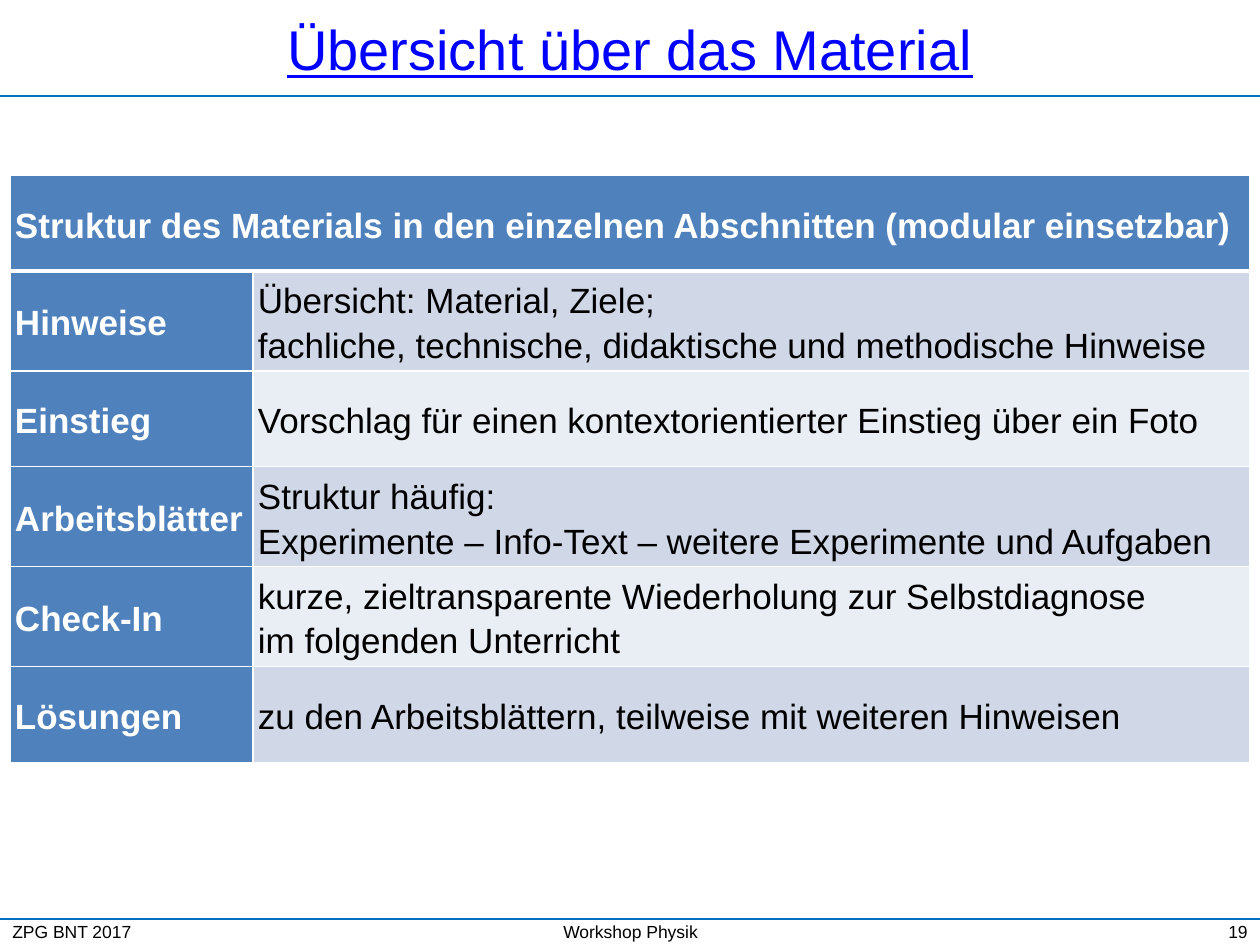
import pptx
import pptx.dml.color
import pptx.enum.shapes
import pptx.enum.text
import pptx.oxml.ns
import pptx.util
from lxml import etree

RGBColor = pptx.dml.color.RGBColor
PP_ALIGN = pptx.enum.text.PP_ALIGN
MIDDLE = pptx.enum.text.MSO_ANCHOR.MIDDLE

RULE_BLUE = RGBColor(0x00, 0x70, 0xC0)
TITLE_BLUE = RGBColor(0x00, 0x00, 0xFF)
HEADER_BLUE = RGBColor(0x4F, 0x81, 0xBD)
BAND_DARK = RGBColor(0xD0, 0xD8, 0xE8)
BAND_LIGHT = RGBColor(0xE9, 0xED, 0xF4)
WHITE = RGBColor(0xFF, 0xFF, 0xFF)
BLACK = RGBColor(0x00, 0x00, 0x00)

PX_PER_INCH = 126
SLIDE_WIDTH, SLIDE_HEIGHT = 1260, 945
CELL_INSET = 5

TITLE_FONT = {"name": "Arial", "size": pptx.util.Pt(32), "underline": True}
LABEL_FONT = {"name": "Arial", "size": pptx.util.Pt(20), "bold": True}
DETAIL_FONT = {"name": "Arial", "size": pptx.util.Pt(20), "bold": False}
FOOTER_FONT = {"name": "Arial", "size": pptx.util.Pt(10)}

HEADING = "Struktur des Materials in den einzelnen Abschnitten (modular einsetzbar)"
SECTIONS = [
    ("Hinweise", "Übersicht: Material, Ziele; \vfachliche, technische, didaktische und methodische Hinweise"),
    ("Einstieg", "Vorschlag für einen kontextorientierter Einstieg über ein Foto"),
    ("Arbeitsblätter", "Struktur häufig: \vExperimente – Info-Text – weitere Experimente und Aufgaben"),
    ("Check-In", "kurze, zieltransparente Wiederholung zur Selbstdiagnose \vim folgenden Unterricht"),
    ("Lösungen", "zu den Arbeitsblättern, teilweise mit weiteren Hinweisen"),
]


def px(length):
    return pptx.util.Emu(round(length * 914400 / PX_PER_INCH))


def set_attributes(target, values):
    for name, value in values.items():
        setattr(target, name, value)


def write_text(frame, wording, font, color, paragraph_format):
    paragraph = frame.paragraphs[0]
    paragraph.text = wording
    set_attributes(paragraph, paragraph_format)
    for run in paragraph.runs:
        set_attributes(run.font, font)
        run.font.color.rgb = color


def add_rule(slide, left, top, width):
    rule = slide.shapes.add_connector(
        pptx.enum.shapes.MSO_CONNECTOR.STRAIGHT, px(left), px(top), px(left + width), px(top))
    rule.line.color.rgb = RULE_BLUE
    rule.line.width = pptx.util.Pt(1.5)
    etree.SubElement(rule._element.spPr, pptx.oxml.ns.qn("a:effectLst"))


def add_title(slide, left, top, width, height):
    title = slide.shapes.title
    set_attributes(title, {"left": px(left), "top": px(top), "width": px(width), "height": px(height)})
    set_attributes(title.text_frame, {"vertical_anchor": MIDDLE, "word_wrap": True,
                                      "auto_size": pptx.enum.text.MSO_AUTO_SIZE.NONE})
    write_text(title.text_frame, "Übersicht über das Material", TITLE_FONT, TITLE_BLUE,
               {"alignment": PP_ALIGN.CENTER})
    add_rule(slide, left, top + height, width)


def add_borders(cell, widths):
    properties = cell._tc.get_or_add_tcPr()
    for position, (side, points) in enumerate(widths.items()):
        border = etree.Element(pptx.oxml.ns.qn(f"a:ln{side}"), w=str(pptx.util.Pt(points)))
        fill = etree.SubElement(border, pptx.oxml.ns.qn("a:solidFill"))
        etree.SubElement(fill, pptx.oxml.ns.qn("a:srgbClr"), val=str(WHITE))
        properties.insert(position, border)


def format_cell(cell, wording, fill, font, color, top=1, bottom=1):
    margins = {f"margin_{side}": px(CELL_INSET) for side in ("left", "top", "right", "bottom")}
    set_attributes(cell, {"vertical_anchor": MIDDLE, **margins})
    cell.fill.solid()
    cell.fill.fore_color.rgb = fill
    add_borders(cell, {"L": 1, "R": 1, "T": top, "B": bottom})
    write_text(cell.text_frame, wording, font, color, {"line_spacing": 1.15})


def add_structure_table(slide, left, top, width, row_height, label_width):
    row_count = len(SECTIONS) + 1
    table = slide.shapes.add_table(
        row_count, 2, px(left), px(top), px(width), px(row_height * row_count)).table
    table.columns[0].width = px(label_width)
    table.columns[1].width = px(width - label_width)
    for row in table.rows:
        row.height = px(row_height)
    table.cell(0, 0).merge(table.cell(0, 1))
    format_cell(table.cell(0, 0), HEADING, HEADER_BLUE, LABEL_FONT, WHITE, bottom=3)
    add_borders(table.cell(0, 1), {"L": 1, "R": 1, "T": 1, "B": 3})
    for number, (label, detail) in enumerate(SECTIONS, start=1):
        band = BAND_DARK if number % 2 else BAND_LIGHT
        top_border = 3 if number == 1 else 1
        format_cell(table.cell(number, 0), label, HEADER_BLUE, LABEL_FONT, WHITE, top_border)
        format_cell(table.cell(number, 1), detail, band, DETAIL_FONT, BLACK, top_border)


def add_footer(slide, left, top, width, height):
    add_rule(slide, left, top, width)
    entries = [
        ("ZPG BNT 2017", 0, 343, PP_ALIGN.LEFT),
        ("Workshop Physik", 431, 399, PP_ALIGN.CENTER),
        ("19", width - 333, 333, PP_ALIGN.RIGHT),
    ]
    for wording, offset, entry_width, alignment in entries:
        entry = slide.shapes.add_textbox(px(left + offset), px(top), px(entry_width), px(height))
        set_attributes(entry.text_frame, {"word_wrap": True, "vertical_anchor": MIDDLE,
                                          "margin_top": 0, "margin_bottom": 0})
        write_text(entry.text_frame, wording, FOOTER_FONT, BLACK, {"alignment": alignment})


def main():
    presentation = pptx.Presentation()
    presentation.slide_width = px(SLIDE_WIDTH)
    presentation.slide_height = px(SLIDE_HEIGHT)
    slide = presentation.slides.add_slide(presentation.slide_layouts[5])
    add_title(slide, 0, 0, SLIDE_WIDTH, 96)
    add_structure_table(slide, 10, 175, 1240, 96, 243)
    add_footer(slide, 0, 919, SLIDE_WIDTH, 26)
    presentation.save("out.pptx")


if __name__ == "__main__":
    main()
